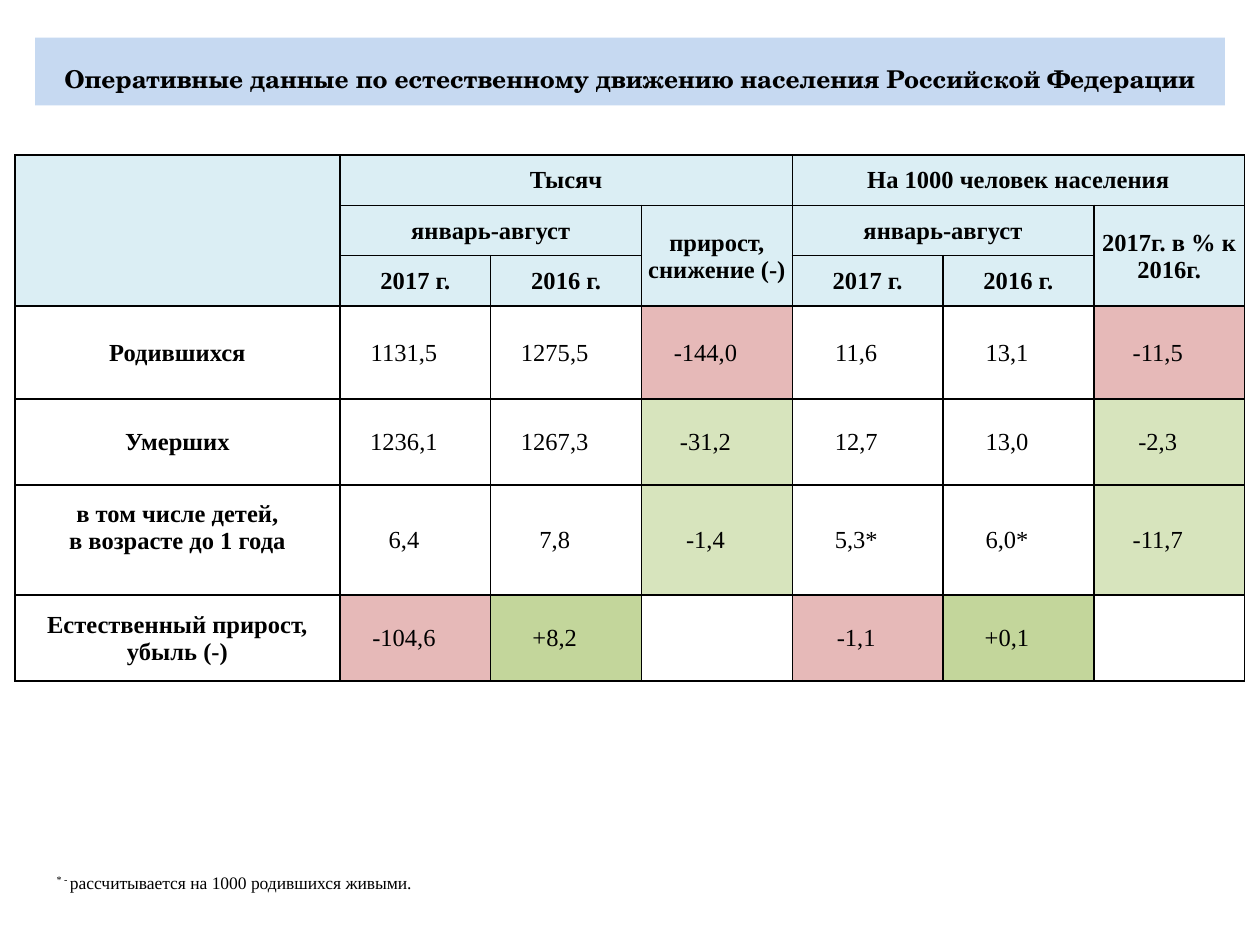
from lxml import etree
from pptx import Presentation
from pptx.dml.color import RGBColor
from pptx.enum.text import MSO_ANCHOR, MSO_AUTO_SIZE, PP_ALIGN
from pptx.oxml.ns import qn
from pptx.util import Pt

MIDDLE, CENTER = MSO_ANCHOR.MIDDLE, PP_ALIGN.CENTER
NO_AUTOSIZE = MSO_AUTO_SIZE.NONE

BLACK = RGBColor(0x00, 0x00, 0x00)
TITLE_BLUE = RGBColor(0xC6, 0xD9, 0xF1)
HEADER_BLUE = RGBColor(0xDB, 0xEE, 0xF4)
RED = RGBColor(0xE6, 0xB9, 0xB8)
PALE_GREEN = RGBColor(0xD7, 0xE4, 0xBD)
GREEN = RGBColor(0xC3, 0xD6, 0x9B)

TITLE_FONT, BODY_FONT = "TeX Gyre Schola", "Times New Roman"

COLUMN_WIDTHS = [185.8] + [86.15] * 6
ROW_HEIGHTS = [28.8] * 3 + [53.2, 49.1, 62.8, 49.1]
HEADER_ROWS = 3
CHILDREN_ROW = 5

# Header cells: row, column, rows spanned, columns spanned, text
HEADERS = [
    (0, 0, 3, 1, ""),
    (0, 1, 1, 3, "Тысяч"),
    (0, 4, 1, 3, "На 1000 человек населения"),
    (1, 3, 2, 1, "прирост, снижение (-)"),
    (1, 6, 2, 1, "2017г. в % к 2016г."),
]
for first in (1, 4):
    HEADERS += [
        (1, first, 1, 2, "январь-август"),
        (2, first, 1, 1, "2017 г."),
        (2, first + 1, 1, 1, "2016 г."),
    ]

DATA = [
    ["Родившихся", "1131,5", "1275,5", "-144,0", "11,6", "13,1", "-11,5"],
    ["Умерших", "1236,1", "1267,3", "-31,2", "12,7", "13,0", "-2,3"],
    ["в том числе детей,\nв возрасте до 1 года",
     "6,4", "7,8", "-1,4", "5,3*", "6,0*", "-11,7"],
    ["Естественный прирост, убыль (-)",
     "-104,6", "+8,2", "", "-1,1", "+0,1", ""],
]
# Highlight colours by column of each data row
HIGHLIGHTS = [
    {3: RED, 6: RED},
    {3: PALE_GREEN, 6: PALE_GREEN},
    {3: PALE_GREEN, 6: PALE_GREEN},
    {1: RED, 2: GREEN, 4: RED, 5: GREEN},
]


def style_font(font, size, name, bold=False):
    font.size, font.name, font.bold = Pt(size), name, bold
    font.color.rgb = BLACK


def add_title(slide, left, top, width, height):
    title = slide.shapes.title
    title.left, title.top = Pt(left), Pt(top)
    title.width, title.height = Pt(width), Pt(height)
    title.fill.solid()
    title.fill.fore_color.rgb = TITLE_BLUE
    frame = title.text_frame
    frame.text = ("Оперативные данные по естественному движению "
                  "населения Российской Федерации")
    frame.word_wrap = True
    frame.auto_size = NO_AUTOSIZE
    frame.vertical_anchor = MIDDLE
    heading = frame.paragraphs[0]
    heading.alignment = CENTER
    heading.line_spacing = 1.5
    style_font(heading.font, 14, TITLE_FONT, True)


def set_borders(cell):
    properties = cell._tc.get_or_add_tcPr()
    for position, side in enumerate(("lnL", "lnR", "lnT", "lnB")):
        line = etree.Element(qn(f"a:{side}"), w=str(Pt(1)))
        fill = etree.SubElement(line, qn("a:solidFill"))
        etree.SubElement(fill, qn("a:srgbClr"), val=str(BLACK))
        properties.insert(position, line)


def fill_cell(cell, text, color=None, bold=False, right=0.7, bottom=0):
    cell.text = text
    cell.vertical_anchor = MIDDLE
    cell.margin_left = cell.margin_top = Pt(0.7)
    cell.margin_right, cell.margin_bottom = Pt(right), Pt(bottom)
    for paragraph in cell.text_frame.paragraphs:
        paragraph.alignment = CENTER
        style_font(paragraph.font, 14, BODY_FONT, bold)
    if color is None:
        cell.fill.background()
    else:
        cell.fill.solid()
        cell.fill.fore_color.rgb = color


def add_population_table(slide, left, top, width, height):
    table = slide.shapes.add_table(
        len(ROW_HEIGHTS), len(COLUMN_WIDTHS),
        Pt(left), Pt(top), Pt(width), Pt(height)).table
    table.first_row = table.horz_banding = False
    for column, column_width in zip(table.columns, COLUMN_WIDTHS):
        column.width = Pt(column_width)
    for row, row_height in zip(table.rows, ROW_HEIGHTS):
        row.height = Pt(row_height)

    # Header
    for row in range(HEADER_ROWS):
        for column in range(len(COLUMN_WIDTHS)):
            fill_cell(table.cell(row, column), "", HEADER_BLUE, True)
    for row, column, row_span, column_span, text in HEADERS:
        cell = table.cell(row, column)
        if row_span * column_span > 1:
            cell.merge(table.cell(row + row_span - 1,
                                  column + column_span - 1))
        fill_cell(cell, text, HEADER_BLUE, True)

    # Data
    for row, (texts, colors) in enumerate(zip(DATA, HIGHLIGHTS), HEADER_ROWS):
        label_bottom = 14.4 if row == CHILDREN_ROW else 0
        fill_cell(table.cell(row, 0), texts[0], bold=True,
                  bottom=label_bottom)
        for column, value in enumerate(texts[1:], 1):
            fill_cell(table.cell(row, column), value, colors.get(column),
                      right=13.7)

    for cell in table.iter_cells():
        set_borders(cell)


def add_footnote(slide, left, top, width, height):
    footnote = slide.shapes.add_textbox(
        Pt(left), Pt(top), Pt(width), Pt(height))
    footnote.text_frame.word_wrap = True
    note = footnote.text_frame.paragraphs[0]
    style_font(note.font, 10, BODY_FONT)
    marker = note.add_run()
    marker.text = "* - "
    marker.font._element.set("baseline", "30000")
    note.add_run().text = "рассчитывается на 1000 родившихся живыми."


def main():
    presentation = Presentation()
    presentation.slide_width, presentation.slide_height = Pt(720), Pt(540)
    title_only = presentation.slide_layouts[5]
    slide = presentation.slides.add_slide(title_only)
    add_population_table(slide, 8.5, 88.5,
                         sum(COLUMN_WIDTHS), sum(ROW_HEIGHTS))
    add_title(slide, 20, 21.5, 680, 38.8)
    add_footnote(slide, 25.2, 494.6, 250, 19.4)
    presentation.save("out.pptx")


if __name__ == "__main__":
    main()
